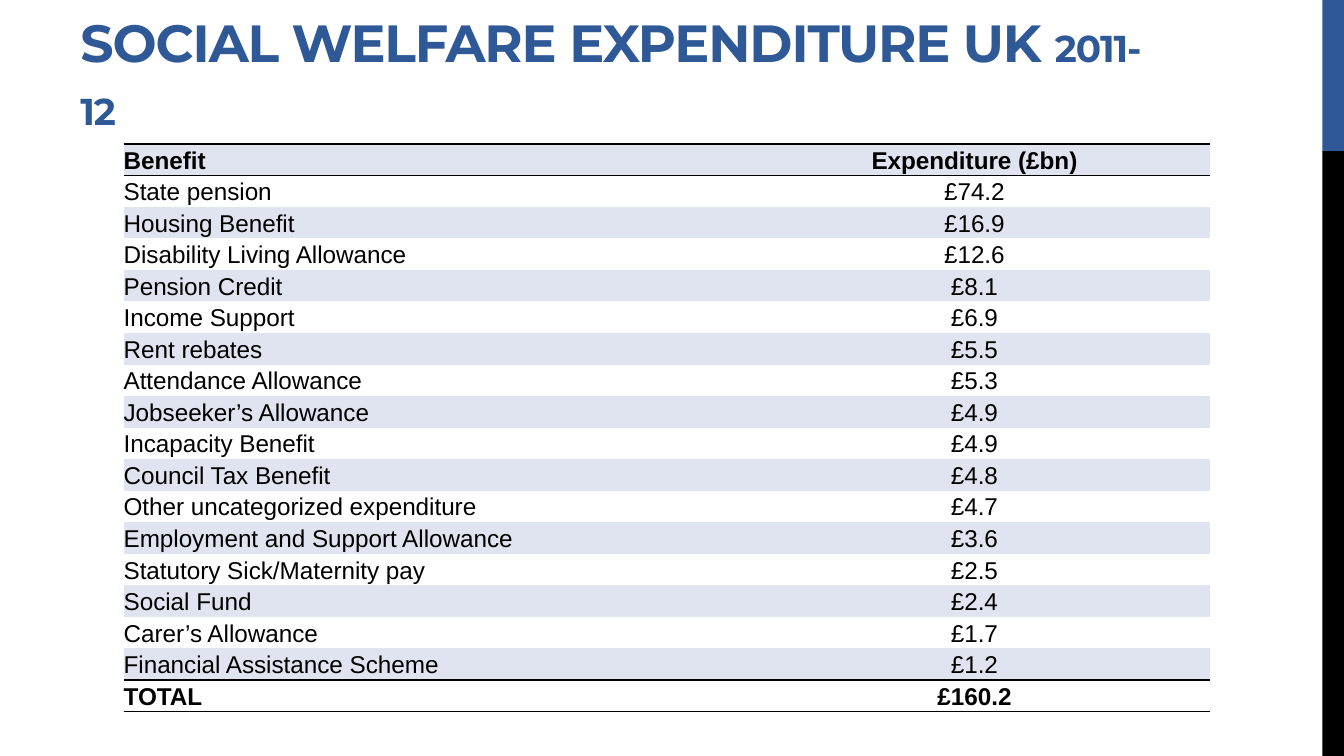
from lxml.etree import SubElement
from pptx import Presentation
from pptx.dml.color import RGBColor
from pptx.enum.shapes import MSO_SHAPE as Shape
from pptx.enum.text import MSO_ANCHOR as Anchor, PP_ALIGN as Align
from pptx.oxml.ns import qn
from pptx.util import Inches, Pt

BLUE, BLACK, WHITE, BAND = "2F5897", "000000", "FFFFFF", "DFE4F0"

SLIDE_WIDTH = 10
SLIDE_HEIGHT = SLIDE_WIDTH * 9 / 16

BENEFITS = [
    ("Benefit", "Expenditure (£bn)"),
    ("State pension", "£74.2"),
    ("Housing Benefit", "£16.9"),
    ("Disability Living Allowance", "£12.6"),
    ("Pension Credit", "£8.1"),
    ("Income Support", "£6.9"),
    ("Rent rebates", "£5.5"),
    ("Attendance Allowance", "£5.3"),
    ("Jobseeker’s Allowance", "£4.9"),
    ("Incapacity Benefit", "£4.9"),
    ("Council Tax Benefit", "£4.8"),
    ("Other uncategorized expenditure", "£4.7"),
    ("Employment and Support Allowance", "£3.6"),
    ("Statutory Sick/Maternity pay", "£2.5"),
    ("Social Fund", "£2.4"),
    ("Carer’s Allowance", "£1.7"),
    ("Financial Assistance Scheme", "£1.2"),
    ("TOTAL", "£160.2"),
]


def rgb(value):
    return RGBColor.from_string(value)


def style_font(font, name, size, color, bold):
    font.name = name
    font.size = Pt(size)
    font.bold = bold
    font.color.rgb = rgb(color)


def add_side_bar(slide, left, top, width, height):
    accent = height * 0.2
    for offset, length, color in ((0, accent, BLUE), (accent, height - accent, BLACK)):
        band = slide.shapes.add_shape(
            Shape.RECTANGLE, Inches(left), Inches(top + offset), Inches(width), Inches(length))
        band.shadow.inherit = False
        band.fill.solid()
        band.fill.fore_color.rgb = rgb(color)
        band.line.fill.background()


def add_title(slide, left, top, width, height):
    title = slide.shapes.add_textbox(Inches(left), Inches(top), Inches(width), Inches(height))
    title.fill.solid()
    title.fill.fore_color.rgb = rgb(WHITE)
    frame = title.text_frame
    frame.word_wrap = True
    frame.vertical_anchor = Anchor.BOTTOM
    frame.margin_bottom = Inches(0.05)
    for text, size in (("SOCIAL WELFARE EXPENDITURE UK ", 28), ("2011-12", 20), (" ", 28)):
        run = frame.paragraphs[0].add_run()
        run.text = text
        style_font(run.font, "Montserrat", size, BLUE, True)
        run.font._element.set("spc", "-60")


def set_borders(cell, ruled_sides):
    properties = cell._tc.get_or_add_tcPr()
    for index, side in enumerate(("lnL", "lnR", "lnT", "lnB")):
        border = properties.makeelement(qn(f"a:{side}"), {"w": str(Pt(1))})
        properties.insert(index, border)
        if side in ruled_sides:
            fill = SubElement(border, qn("a:solidFill"))
            SubElement(fill, qn("a:srgbClr"), val=BLACK)
        else:
            SubElement(border, qn("a:noFill"))


def fill_cell(cell, text, align, banded, bold, ruled_sides):
    cell.margin_left = cell.margin_right = cell.margin_top = cell.margin_bottom = 0
    cell.vertical_anchor = Anchor.MIDDLE
    if banded:
        cell.fill.solid()
        cell.fill.fore_color.rgb = rgb(BAND)
    else:
        cell.fill.background()
    paragraph = cell.text_frame.paragraphs[0]
    paragraph.text = text
    paragraph.alignment = align
    paragraph.line_spacing = 1.08
    style_font(paragraph.runs[0].font, "Arial", 13, BLACK, bold)
    set_borders(cell, ruled_sides)


def add_benefit_table(slide, left, top, width, height):
    last = len(BENEFITS) - 1
    table = slide.shapes.add_table(
        len(BENEFITS), 2, Inches(left), Inches(top), Inches(width), Inches(height)).table
    table.horz_banding = False
    name_width = 4.58
    table.columns[0].width = Inches(name_width)
    table.columns[1].width = Inches(width - name_width)
    rules = {0: ("lnT", "lnB"), 1: ("lnT",), last - 1: ("lnB",), last: ("lnT", "lnB")}
    for row, entry in enumerate(BENEFITS):
        table.rows[row].height = Inches(height / len(BENEFITS))
        for column, align in enumerate((Align.LEFT, Align.CENTER)):
            fill_cell(table.cell(row, column), entry[column], align,
                      row % 2 == 0, row in (0, last), rules.get(row, ()))


def main():
    deck = Presentation()
    deck.slide_width, deck.slide_height = Inches(SLIDE_WIDTH), Inches(SLIDE_HEIGHT)
    slide = deck.slides.add_slide(deck.slide_layouts[6])
    add_side_bar(slide, 9.84, 0, 0.16, SLIDE_HEIGHT)
    add_title(slide, 0.5, 0, 8.32, 1.06)
    add_benefit_table(slide, 0.92, 1.07, 8.08, 4.23)
    deck.save("out.pptx")


if __name__ == "__main__":
    main()
